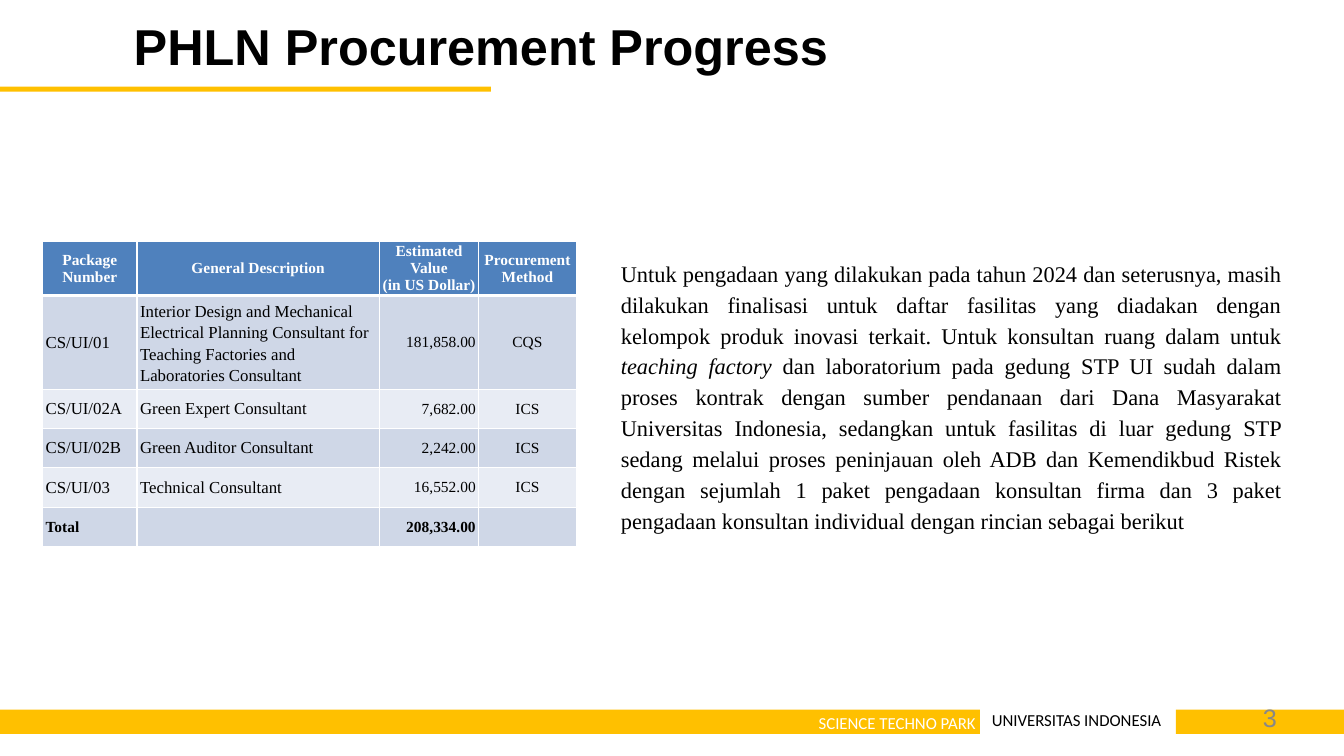
from lxml import etree
from pptx import Presentation
from pptx.dml.color import RGBColor
from pptx.enum.shapes import MSO_SHAPE
from pptx.enum.text import MSO_ANCHOR, MSO_AUTO_SIZE, PP_ALIGN
from pptx.oxml.ns import qn
from pptx.util import Inches, Pt

RECT = MSO_SHAPE.RECTANGLE
TOP, MIDDLE = MSO_ANCHOR.TOP, MSO_ANCHOR.MIDDLE
FIXED = MSO_AUTO_SIZE.NONE
LEFT, MID, RIGHT, JUST = PP_ALIGN.LEFT, PP_ALIGN.CENTER, PP_ALIGN.RIGHT, PP_ALIGN.JUSTIFY

WIDE, HIGH = Inches(13.33), Inches(7.5)
SERIF = "Times New Roman"
GOLD, WHITE, BLACK, GREY = "FFC000", "FFFFFF", "000000", "888888"
BLUE, BANDS = "4F81BD", ("CFD7E7", "E8ECF4")

# Column widths and row heights, in percent of the slide
COLS = (7.03, 18.03, 7.4, 7.25)
ROWS = (7.2, 12.4, 5.2, 5.2, 5.2, 5.2)
HEAD = ("Package Number", "General Description",
        "Estimated Value\n(in US Dollar)", "Procurement Method")
DATA = (
    ("CS/UI/01", "Interior Design and Mechanical Electrical Planning Consultant for "
     "Teaching Factories and Laboratories Consultant", "181,858.00", "CQS"),
    ("CS/UI/02A", "Green Expert Consultant", "7,682.00", "ICS"),
    ("CS/UI/02B", "Green Auditor Consultant", "2,242.00", "ICS"),
    ("CS/UI/03", "Technical Consultant", "16,552.00", "ICS"),
    ("Total", "", "208,334.00", ""),
)
BODY = (
    ("Untuk pengadaan yang dilakukan pada tahun 2024 dan seterusnya, masih dilakukan "
     "finalisasi untuk daftar fasilitas yang diadakan dengan kelompok produk inovasi "
     "terkait. Untuk konsultan ruang dalam untuk ", False),
    ("teaching factory ", True),
    ("dan laboratorium pada gedung STP UI sudah dalam proses kontrak dengan sumber "
     "pendanaan dari Dana Masyarakat Universitas Indonesia, sedangkan untuk fasilitas "
     "di luar gedung STP sedang melalui proses peninjauan oleh ADB dan Kemendikbud "
     "Ristek dengan sejumlah 1 paket pengadaan konsultan firma dan 3 paket pengadaan "
     "konsultan individual dengan rincian sebagai berikut", False),
)


def color(code):
    return RGBColor.from_string(code)


def across(share):
    return int(WIDE * share / 100)


def down(share):
    return int(HIGH * share / 100)


def area(x, y, w, h):
    return across(x), down(y), across(w), down(h)


def write(para, text, size, face, code, bold=False, slant=False):
    run = para.add_run()
    run.text = text
    font = run.font
    font.size, font.name = Pt(size), face
    font.bold, font.italic = bold, slant
    font.color.rgb = color(code)


def frame(shape, inset=0.0):
    box = shape.text_frame
    box.word_wrap, box.auto_size, box.vertical_anchor = True, FIXED, TOP
    box.margin_left = box.margin_right = Inches(inset)
    box.margin_top = box.margin_bottom = Inches(inset)
    return box.paragraphs[0]


def bar(slide, *spot):
    shape = slide.shapes.add_shape(RECT, *area(*spot))
    shape.shadow.inherit = False
    shape.fill.solid()
    shape.fill.fore_color.rgb = color(GOLD)
    shape.line.fill.background()


def label(slide, spot, text, size, face, code, align=LEFT):
    para = frame(slide.shapes.add_textbox(*area(*spot)))
    para.alignment = align
    write(para, text, size, face, code)


def title(slide, text):
    shape = slide.shapes.title
    shape.left, shape.top, shape.width, shape.height = area(9.95, 1.95, 85, 8.25)
    para = frame(shape)
    para.alignment = LEFT
    write(para, text, 36, "Arial", BLACK, bold=True)


def story(slide, spot):
    para = frame(slide.shapes.add_textbox(*area(*spot)), 0.1)
    para.alignment, para.line_spacing = JUST, 1.15
    for text, slant in BODY:
        write(para, text, 16, SERIF, BLACK, slant=slant)


def edge(cell, side, width):
    # Borders go ahead of the fill in the cell properties
    props = cell._tc.get_or_add_tcPr()
    line = etree.Element(qn(f"a:ln{side}"), w=str(Pt(width)))
    fill = etree.SubElement(line, qn("a:solidFill"))
    etree.SubElement(fill, qn("a:srgbClr"), val=WHITE)
    props.insert(len(props.findall("*")) - 1, line)


def fill_cell(cell, text, row, col):
    head, total = row == 0, row == len(DATA)
    cell.margin_left = cell.margin_right = Inches(0.03)
    cell.margin_top = cell.margin_bottom = 0
    cell.vertical_anchor = MIDDLE
    cell.fill.solid()
    cell.fill.fore_color.rgb = color(BLUE if head else BANDS[(row - 1) % 2])
    for side in "LRTB":
        thick = (head and side == "B") or (row == 1 and side == "T")
        edge(cell, side, 3 if thick else 1)

    size = 12 if col < 2 and not head and not total else 11
    for i, part in enumerate(text.split("\n") if text else ()):
        box = cell.text_frame
        para = box.add_paragraph() if i else box.paragraphs[0]
        para.alignment = MID if head else (LEFT, LEFT, RIGHT, MID)[col]
        if row == 1 and col == 1:
            para.line_spacing = 1.15
        write(para, part, size, SERIF, WHITE if head else BLACK, bold=head or total)


def grid(slide, x, y):
    spot = area(x, y, sum(COLS), sum(ROWS))
    table = slide.shapes.add_table(len(ROWS), len(COLS), *spot).table
    for col, share in enumerate(COLS):
        table.columns[col].width = across(share)
    for row, texts in enumerate((HEAD, *DATA)):
        table.rows[row].height = down(ROWS[row])
        for col, text in enumerate(texts):
            fill_cell(table.cell(row, col), text, row, col)


def main():
    deck = Presentation()
    deck.slide_width, deck.slide_height = WIDE, HIGH
    slide = deck.slides.add_slide(deck.slide_layouts[5])

    # Title rule and footer bands
    bar(slide, 0, 11.47, 36.53, 0.67)
    bar(slide, 0, 93.87, 72.92, 3.2)
    bar(slide, 87.5, 93.87, 12.5, 3.2)

    # Title and footer text
    title(slide, "PHLN Procurement Progress")
    label(slide, (46.66, 94.3, 25.96, 2.8), "SCIENCE TECHNO PARK", 12, "Calibri", WHITE, RIGHT)
    label(slide, (73.8, 93.9, 13, 2.8), "UNIVERSITAS INDONESIA", 12, "Calibri", BLACK)
    label(slide, (72, 92.93, 23, 5.07), "3", 18, "Arial", GREY, RIGHT)

    # Packages and status
    grid(slide, 3.17, 31.9)
    story(slide, (45.46, 32.53, 50.64, 39.33))
    deck.save("out.pptx")


if __name__ == "__main__":
    main()
